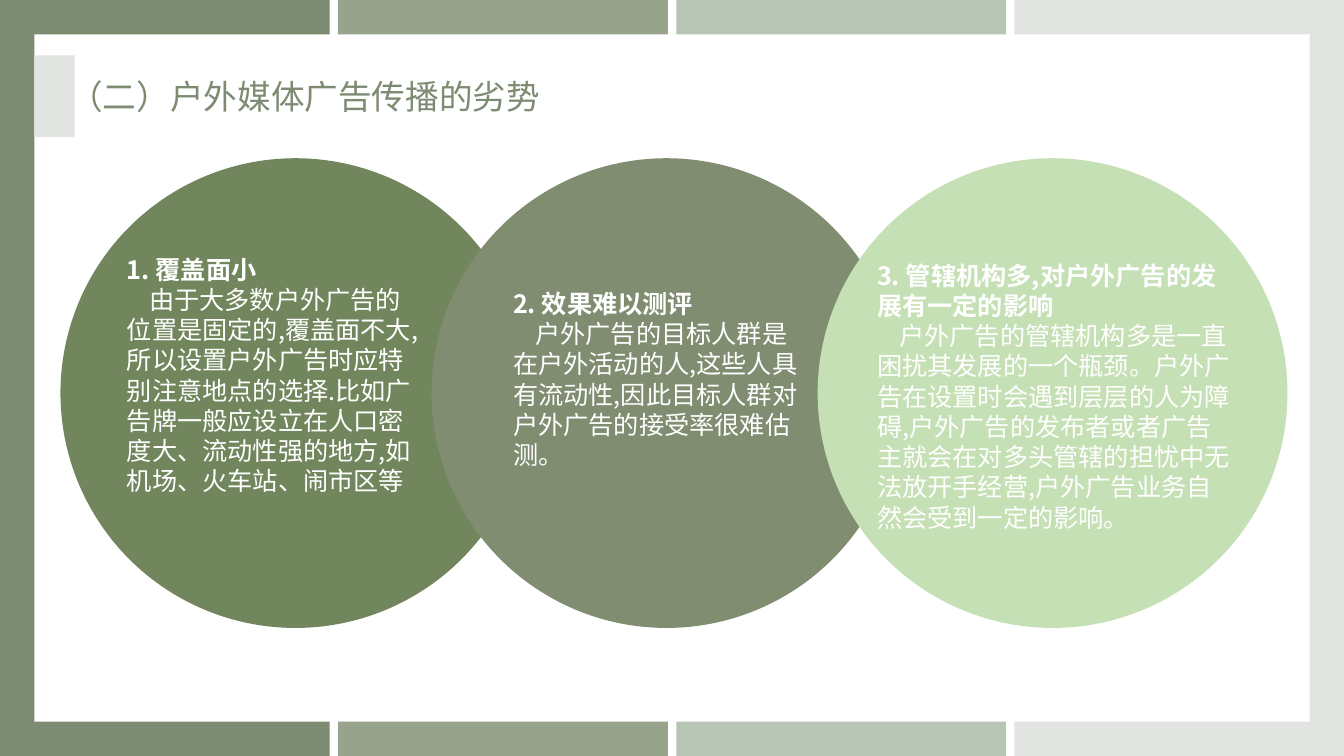
from dataclasses import dataclass

from lxml import etree
from pptx import Presentation
from pptx.dml.color import RGBColor
from pptx.enum.shapes import MSO_SHAPE
from pptx.enum.text import MSO_ANCHOR, PP_ALIGN
from pptx.oxml.ns import qn
from pptx.util import Inches, Pt

RECTANGLE = MSO_SHAPE.RECTANGLE
OVAL = MSO_SHAPE.OVAL
TOP = MSO_ANCHOR.TOP
LEFT = PP_ALIGN.LEFT

FONT = "Noto Sans CJK SC"
WHITE = "FFFFFF"
PALE_GREY = "E1E4E1"
TITLE_GREEN = "7C8B71"
BAND_COLORS = (TITLE_GREEN, "98A38B", "B7C5B5", PALE_GREY)
BAND_WIDTH = 3.27
BAND_STEP = 3.354
CIRCLE_TOP = 1.57
CIRCLE_SIZE = 4.66
BODY_INDENT = 0.22


@dataclass
class Box:
    left: float
    top: float
    width: float
    height: float

    def lengths(self):
        return [Inches(v) for v in (self.left, self.top, self.width, self.height)]


@dataclass
class Drawback:
    circle_left: float
    color: str
    text_box: Box
    heading: str
    body: str


DRAWBACKS = (
    Drawback(
        0.6, "71865C", Box(1.16, 2.47, 3.16, 2.83), "1. 覆盖面小",
        "由于大多数户外广告的位置是固定的,覆盖面不大,所以设置户外广告时应特别注意地点的选择."
        "比如广告牌一般应设立在人口密度大、流动性强的地方,如机场、火车站、闹市区等",
    ),
    Drawback(
        4.28, "808D71", Box(4.99, 2.81, 3.07, 1.92), "2. 效果难以测评",
        "户外广告的目标人群是在户外活动的人,这些人具有流动性,"
        "因此目标人群对户外广告的接受率很难估测。",
    ),
    Drawback(
        8.11, "C5E0B4", Box(8.6, 2.53, 3.71, 2.83),
        "3. 管辖机构多,对户外广告的发展有一定的影响",
        "户外广告的管辖机构多是一直困扰其发展的一个瓶颈。户外广告在设置时会遇到层层的人为障碍,"
        "户外广告的发布者或者广告主就会在对多头管辖的担忧中无法放开手经营,"
        "户外广告业务自然会受到一定的影响。",
    ),
)


def rgb(color: str) -> RGBColor:
    return RGBColor.from_string(color)


def add_filled(slide, kind, box: Box, color: str) -> None:
    shape = slide.shapes.add_shape(kind, *box.lengths())
    shape.shadow.inherit = False
    shape.fill.solid()
    shape.fill.fore_color.rgb = rgb(color)
    shape.line.fill.background()


def add_text_frame(slide, box: Box):
    frame = slide.shapes.add_textbox(*box.lengths()).text_frame
    frame.word_wrap = True
    frame.vertical_anchor = TOP
    return frame


def add_run(paragraph, text: str, size: int, color: str, bold: bool = False) -> None:
    paragraph.alignment = LEFT
    run = paragraph.add_run()
    run.text = text
    run.font.size = Pt(size)
    run.font.bold = bold
    run.font.color.rgb = rgb(color)
    run.font.name = FONT
    east_asian = etree.SubElement(run.font._element, qn("a:ea"))
    east_asian.set("typeface", FONT)


def add_frame(slide) -> None:
    """Draw the four colour bands and the white panel that covers their middle."""
    for index, color in enumerate(BAND_COLORS):
        add_filled(slide, RECTANGLE, Box(index * BAND_STEP, 0, BAND_WIDTH, 7.5), color)
    add_filled(slide, RECTANGLE, Box(0.34, 0.34, 12.65, 6.82), WHITE)


def add_drawback(slide, drawback: Drawback) -> None:
    circle = Box(drawback.circle_left, CIRCLE_TOP, CIRCLE_SIZE, CIRCLE_SIZE)
    add_filled(slide, OVAL, circle, drawback.color)
    frame = add_text_frame(slide, drawback.text_box)
    add_run(frame.paragraphs[0], drawback.heading, 18, WHITE, bold=True)
    body = frame.add_paragraph()
    body._p.get_or_add_pPr().set("indent", str(Inches(BODY_INDENT)))
    add_run(body, drawback.body, 18, WHITE)


def add_title(slide) -> None:
    add_filled(slide, RECTANGLE, Box(0.34, 0.55, 0.4, 0.81), PALE_GREY)
    frame = add_text_frame(slide, Box(0.59, 0.7, 5.93, 0.5))
    add_run(frame.paragraphs[0], "（二）户外媒体广告传播的劣势", 24, TITLE_GREEN)


def main() -> None:
    presentation = Presentation()
    presentation.slide_width = Inches(13.33)
    presentation.slide_height = Inches(7.5)
    slide = presentation.slides.add_slide(presentation.slide_layouts[6])
    add_frame(slide)
    for drawback in DRAWBACKS:
        add_drawback(slide, drawback)
    add_title(slide)
    presentation.save("out.pptx")


if __name__ == "__main__":
    main()
